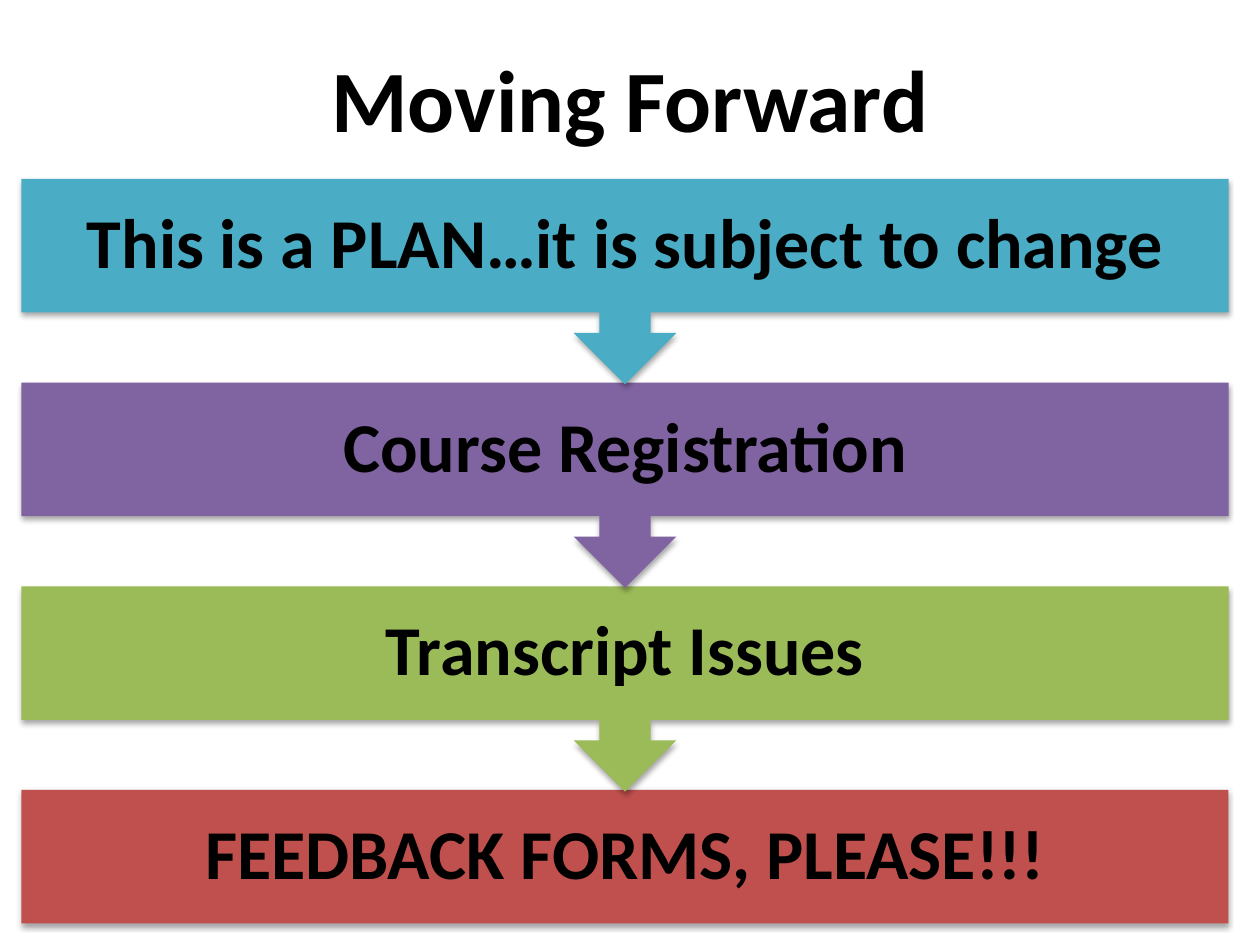
from lxml.etree import SubElement
from pptx import Presentation
from pptx.dml.color import RGBColor
from pptx.enum.shapes import MSO_SHAPE
from pptx.enum.text import MSO_ANCHOR, PP_ALIGN
from pptx.oxml.ns import qn
from pptx.util import Inches, Pt

COLORS = {
    "text": "000000",
    "shadow": "000000",
    "plan": "4BACC6",
    "registration": "8064A2",
    "transcripts": "9BBB59",
    "feedback": "C0504D",
}
STEPS = [
    ("This is a PLAN…it is subject to change", "plan"),
    ("Course Registration", "registration"),
    ("Transcript Issues", "transcripts"),
    ("FEEDBACK FORMS, PLEASE!!!", "feedback"),
]
STEP_HEIGHT = Inches(1.06)
CALLOUT_HEIGHT = Inches(1.63)


def format_text(frame, text, size):
    """Write one bold, centred paragraph into a text frame."""
    frame.text = text
    frame.word_wrap = True
    frame.vertical_anchor = MSO_ANCHOR.MIDDLE
    paragraph = frame.paragraphs[0]
    paragraph.alignment = PP_ALIGN.CENTER
    font = paragraph.font
    font.name, font.size, font.bold = "Calibri", Pt(size), True
    font.color.rgb = RGBColor.from_string(COLORS["text"])
    return paragraph


def add_soft_shadow(shape):
    """Give a shape a faint shadow that falls straight down."""
    shape.shadow.inherit = False
    effects = shape._element.spPr.find(qn("a:effectLst"))
    shadow = SubElement(
        effects, qn("a:outerShdw"), blurRad=str(Pt(3.1)), dist=str(Pt(1.8)),
        dir="5400000", rotWithShape="0",
    )
    color = SubElement(shadow, qn("a:srgbClr"), val=COLORS["shadow"])
    SubElement(color, qn("a:alpha"), val="35000")


def add_title(slide, left, top, width, height):
    """Place the slide title in the given box."""
    title = slide.shapes.title
    title.left, title.top, title.width, title.height = left, top, width, height
    format_text(title.text_frame, "Moving Forward", 50)


def add_step(slide, text, color, is_last, left, top, width):
    """Draw one step, with an arrow to the next unless it is the last."""
    if is_last:
        step = slide.shapes.add_shape(MSO_SHAPE.RECTANGLE, left, top, width, STEP_HEIGHT)
    else:
        step = slide.shapes.add_shape(
            MSO_SHAPE.UP_ARROW_CALLOUT, left, top, width, CALLOUT_HEIGHT)
        step.rotation = 180
    step.fill.solid()
    step.fill.fore_color.rgb = RGBColor.from_string(COLORS[color])
    step.line.fill.background()
    add_soft_shadow(step)

    label = slide.shapes.add_textbox(left, top, width, STEP_HEIGHT).text_frame
    label.margin_left = label.margin_right = Inches(0.31)
    label.margin_top = label.margin_bottom = Inches(0.31)
    format_text(label, text, 40).line_spacing = 0.9


def add_process(slide, left, top, width, height):
    """Spread the steps evenly down the box, the last one at the back."""
    last = len(STEPS) - 1
    pitch = (height - STEP_HEIGHT) / last
    for index, (text, color) in reversed(list(enumerate(STEPS))):
        step_top = top + round(index * pitch)
        add_step(slide, text, color, index == last, left, step_top, width)


def main():
    """Build and save the slide."""
    deck = Presentation()
    deck.slide_width, deck.slide_height = Inches(10), Inches(7.5)
    slide = deck.slides.add_slide(deck.slide_layouts[5])
    add_title(slide, Inches(0.5), Inches(0.3), Inches(9), Inches(0.95))
    add_process(slide, Inches(0.17), Inches(1.42), Inches(9.58), Inches(5.91))
    deck.save("out.pptx")


if __name__ == "__main__":
    main()
